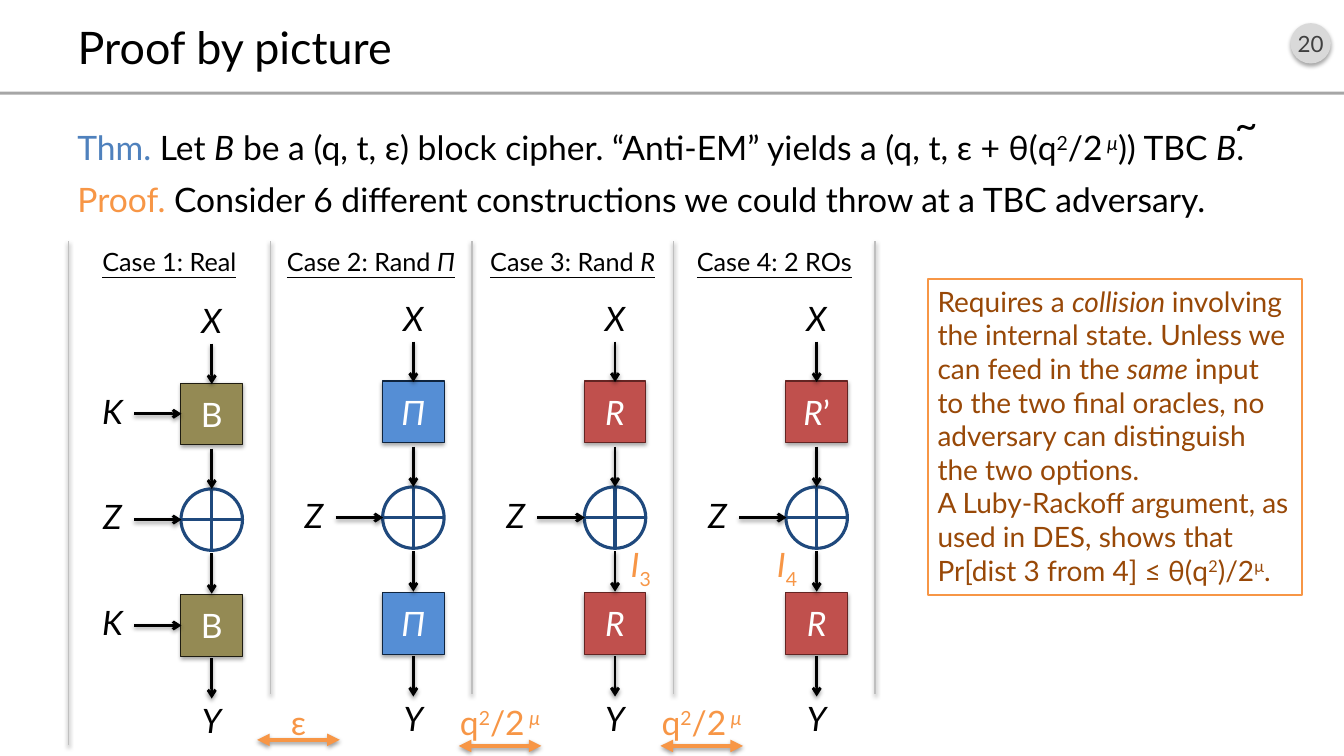
"""Build the 'Proof by picture' slide: four cipher cases and their distinguishing bounds."""
import lxml.etree
import pptx
import pptx.dml.color
import pptx.enum.shapes
import pptx.enum.text
import pptx.oxml.ns
import pptx.util

COLORS = {
    "black": "000000", "white": "FFFFFF", "badge": "D9D9D9", "badge text": "404040",
    "rule": "A6A6A6", "divider": "BFBFBF", "blue": "4F81BD", "orange": "F79646",
    "brown": "984807", "navy": "1F497D", "olive": "948A54", "olive edge": "1E1C11",
    "sky": "558ED5", "sky edge": "0F243E", "red": "C0504D", "red edge": "632523",
}
FONT = "Lato"
TITLE = "Proof by picture"
PAGE_NUMBER = "20"

# Each span is (text, marks, optional color); marks: i italic, u underline, ^ super, _ sub.
THEOREM = [
    [("Thm.", "", "blue"), (" Let ", ""), ("B", "i"),
     (" be a (q, t, ε) block cipher. “Anti-EM” yields a (q, t, ε + θ(q", ""), ("2", "^"),
     ("/2", ""), (" μ", "i^"), (")) TBC ", ""), ("B", "i"), (".", "")],
    [("Proof.", "", "orange"),
     (" Consider 6 different constructions we could throw at a TBC adversary.", "")],
]
REMARK = [
    [("Requires a ", ""), ("collision ", "i"),
     ("involving the internal state. Unless we can feed in the ", ""), ("same", "i"),
     (" input to the two final oracles, no adversary can distinguish the two options.", "")],
    [("A Luby-Rackoff argument, as used in DES, shows that", "")],
    [("Pr[dist 3 from 4] ≤ θ(q", ""), ("2", "^"), (")/2", ""), ("μ", "^"), (".", "")],
]
CASES = [
    {"name": [("Case 1: Real", "u")], "color": "olive", "keyed": True, "drop": 0.02,
     "oracles": ([("B", "")], [("B", "")])},
    {"name": [("Case 2: Rand ", "u"), ("Π", "iu")], "color": "sky", "keyed": False, "drop": 0,
     "oracles": ([("Π", "i")], [("Π", "i")])},
    {"name": [("Case 3: Rand ", "u"), ("R", "iu")], "color": "red", "keyed": False, "drop": 0,
     "oracles": ([("R", "i")], [("R", "i")])},
    {"name": [("Case 4: 2 ROs", "u")], "color": "red", "keyed": False, "drop": 0,
     "oracles": ([("R", "i"), ("’", "")], [("R", "i")])},
]
COLLISION = [("q", ""), ("2", "^"), ("/2", ""), (" μ", "i^")]
BOUNDS = [([("ε", "")], 7.34), (COLLISION, 7.4), (COLLISION, 7.4)]
STATES = [("3", 6.05), ("4", 7.5)]

PITCH = 2.0
FIRST_DIVIDER, FIRST_AXIS, FIRST_BOUND = 0.68, 2.1, 2.96
CASE_TOP, CASE_BOTTOM = 2.39, 6.89
NODE, LABEL_HEIGHT = 0.61, 0.4
NODE_TOP, NODE_PITCH = 3.78, 1.05
ARROW_TOP, ARROW_PITCH, ARROW_LENGTH = 3.39, 1.04, 0.4
INPUT_TOP, OUTPUT_TOP = 2.96, 6.92

SHAPES = pptx.enum.shapes.MSO_SHAPE
ANCHOR = pptx.enum.text.MSO_ANCHOR
ALIGN = pptx.enum.text.PP_ALIGN
inches = pptx.util.Inches
qualified = pptx.oxml.ns.qn


def rgb(name):
    return pptx.dml.color.RGBColor.from_string(COLORS[name])


def write(frame, paragraphs, size, color="black", align=ALIGN.CENTER, anchor=ANCHOR.TOP,
          insets=(0, 0), wrap=True, before=0):
    frame.word_wrap = wrap
    frame.vertical_anchor = anchor
    frame.margin_left = frame.margin_right = inches(insets[0])
    frame.margin_top = frame.margin_bottom = inches(insets[1])
    for index, spans in enumerate(paragraphs):
        para = frame.add_paragraph() if index else frame.paragraphs[0]
        para.alignment = align
        para.space_before = pptx.util.Pt(before)
        for text, marks, *tint in spans:
            span = para.add_run()
            span.text = text
            font = span.font
            font.name, font.size = FONT, pptx.util.Pt(size)
            font.color.rgb = rgb(tint[0] if tint else color)
            font.italic = "i" in marks
            font.underline = "u" in marks
            if "^" in marks or "_" in marks:
                font._element.set("baseline", "30000" if "^" in marks else "-25000")


def add_shadow(effects, opacity, blur, distance):
    shadow = lxml.etree.SubElement(
        effects, qualified("a:outerShdw"), blurRad=str(pptx.util.Pt(blur)),
        dist=str(pptx.util.Pt(distance)), dir="5400000", rotWithShape="0")
    tone = lxml.etree.SubElement(shadow, qualified("a:srgbClr"), val=COLORS["black"])
    lxml.etree.SubElement(tone, qualified("a:alpha"), val=str(opacity * 1000))


def add_box(page, kind, place, fill=None, edge=None, width=0.75, shadow=False):
    box = page.shapes.add_shape(kind, *map(inches, place))
    box.shadow.inherit = False
    if fill:
        box.fill.solid()
        box.fill.fore_color.rgb = rgb(fill)
    else:
        box.fill.background()
    if edge:
        box.line.color.rgb = rgb(edge)
        box.line.width = pptx.util.Pt(width)
    else:
        box.line.fill.background()
    if shadow:
        add_shadow(box.element.spPr.find(qualified("a:effectLst")), 35, 3.1, 1.8)
    return box


def add_label(page, place, spans, size=24, **style):
    box = page.shapes.add_textbox(*map(inches, place))
    write(box.text_frame, [spans], size, **style)


def add_line(page, start, end, color="black", width=2, head=None, tail=None, shadow=True):
    line = page.shapes.add_connector(
        pptx.enum.shapes.MSO_CONNECTOR.STRAIGHT, *map(inches, (*start, *end)))
    line.line.color.rgb = rgb(color)
    line.line.width = pptx.util.Pt(width)
    properties = line.element.spPr
    for tag, kind in (("a:headEnd", head), ("a:tailEnd", tail)):
        if kind:
            lxml.etree.SubElement(properties.find(qualified("a:ln")), qualified(tag), type=kind)
    effects = lxml.etree.SubElement(properties, qualified("a:effectLst"))
    if shadow:
        add_shadow(effects, 38, 3.1, 1.6)


def add_side_input(page, letter, axis, middle):
    add_line(page, (axis - 0.77, middle), (axis - 0.3, middle), tail="arrow")
    add_label(page, (axis - 1.29, middle - 0.23, NODE, LABEL_HEIGHT), [(letter, "i")])


def add_case(page, column, case):
    shift, drop = column * PITCH, case["drop"]
    axis, divider = FIRST_AXIS + shift, FIRST_DIVIDER + shift
    left = axis - NODE / 2
    tops = [NODE_TOP + drop + row * NODE_PITCH for row in range(3)]
    middles = [top + NODE / 2 for top in tops]
    add_label(page, (divider + 0.05, CASE_TOP, PITCH - 0.1, LABEL_HEIGHT), case["name"], 18,
              insets=(0.1, 0.05), wrap=False)
    for letter, top in (("X", INPUT_TOP), ("Y", OUTPUT_TOP)):
        add_label(page, (left, top + drop, NODE, LABEL_HEIGHT), [(letter, "i")])
    for row, oracle in zip((0, 2), case["oracles"]):
        box = add_box(page, SHAPES.RECTANGLE, (left, tops[row], NODE, NODE),
                      case["color"], case["color"] + " edge", shadow=True)
        write(box.text_frame, [oracle], 24, "white", anchor=ANCHOR.MIDDLE, insets=(0, 0.05))
        if case["keyed"]:
            add_side_input(page, "K", axis, middles[row])
    add_box(page, SHAPES.OVAL, (left, tops[1], NODE, NODE), edge="navy", width=2.25)
    for start, end in (((left, middles[1]), (left + NODE, middles[1])),
                       ((axis, tops[1]), (axis, tops[1] + NODE))):
        add_line(page, start, end, "navy", 2.25, shadow=False)
    add_side_input(page, "Z", axis, middles[1])
    for row in range(4):
        top = ARROW_TOP + drop + row * ARROW_PITCH
        add_line(page, (axis, top), (axis, top + ARROW_LENGTH), tail="arrow")


def main():
    deck = pptx.Presentation()
    deck.slide_width, deck.slide_height = inches(13.33), inches(7.5)
    page = deck.slides.add_slide(deck.slide_layouts[5])
    badge = add_box(page, SHAPES.OVAL, (12.8, 0.23, 0.4, 0.4), "badge", shadow=True)
    write(badge.text_frame, [[(PAGE_NUMBER, "")]], 16, "badge text",
          anchor=ANCHOR.MIDDLE, insets=(0, 0.05), wrap=False)
    add_box(page, SHAPES.RECTANGLE, (0, 0.91, 13.33, 0.03), "rule")
    title = page.shapes.title
    title.left, title.top, title.width, title.height = map(inches, (0.67, 0.16, 12, 0.6))
    write(title.text_frame, [[(TITLE, "")]], 32, align=ALIGN.LEFT, anchor=ANCHOR.MIDDLE,
          insets=(0.1, 0.05))
    theorem = page.shapes.add_textbox(*map(inches, (0.67, 1.21, 12, 1.12)))
    write(theorem.text_frame, THEOREM, 24, align=ALIGN.LEFT, insets=(0.1, 0.05), before=8)
    add_label(page, (12.15, 0.95, 0.43, 0.57), [("~", "")], 28, align=ALIGN.LEFT,
              insets=(0.1, 0.05), wrap=False)

    for column in range(len(CASES) + 1):
        divider = FIRST_DIVIDER + column * PITCH
        bottom = CASE_BOTTOM if column else 7.39
        add_line(page, (divider, CASE_TOP), (divider, bottom), "divider", 1)
    for column, case in enumerate(CASES):
        add_case(page, column, case)
    for column, (bound, level) in enumerate(BOUNDS):
        middle = FIRST_BOUND + column * PITCH
        box = add_box(page, SHAPES.RECTANGLE, (middle - 0.45, 6.96, 0.9, LABEL_HEIGHT), "white")
        write(box.text_frame, [bound], 24, "orange")
        add_line(page, (middle - 0.41, level), (middle + 0.41, level), "orange", 3,
                 head="triangle", tail="triangle")

    remark = add_box(page, SHAPES.RECTANGLE, (9.2, 2.77, 3.71, 3.13), edge="orange", width=1.5)
    write(remark.text_frame, REMARK, 20, "brown", align=ALIGN.LEFT, insets=(0.1, 0.05))
    for index, left in STATES:
        add_label(page, (left, 5.4, NODE, LABEL_HEIGHT), [("I", "i"), (index, "_")],
                  color="orange")
    deck.save("out.pptx")


if __name__ == "__main__":
    main()
